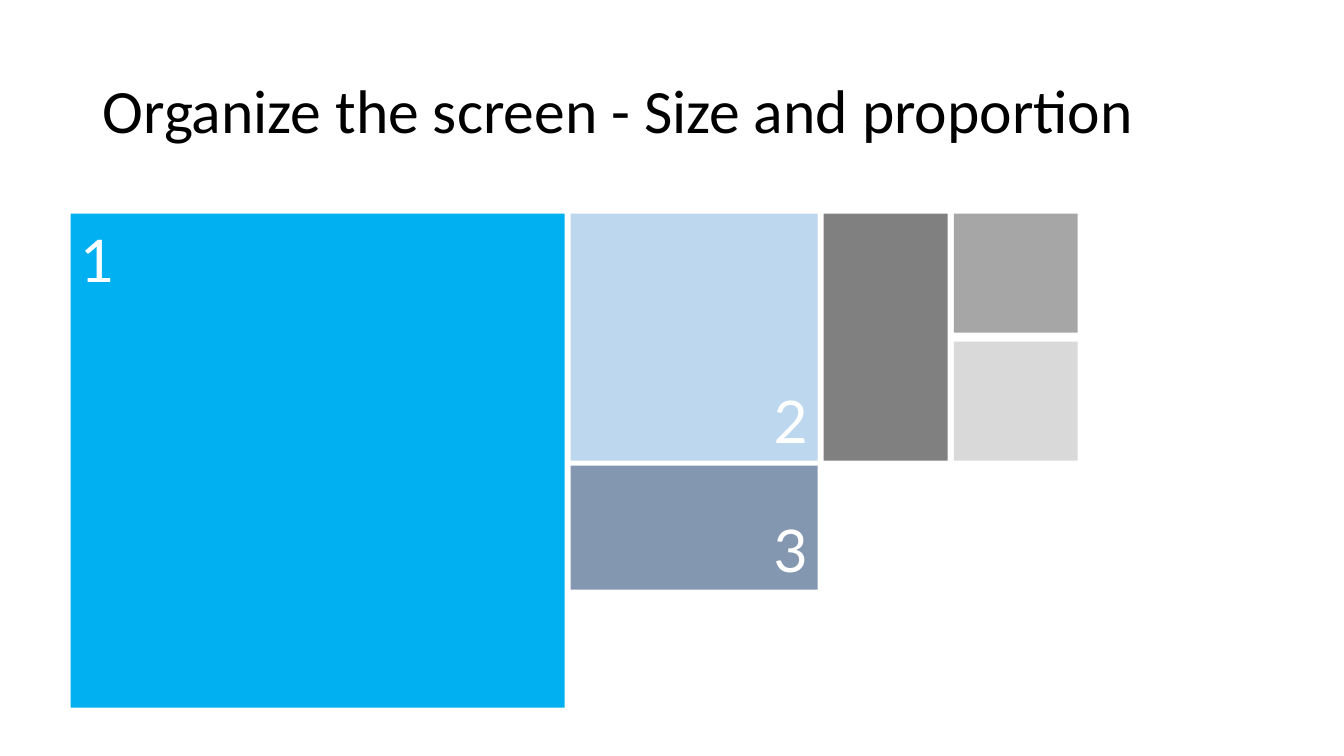
from pptx import Presentation
from pptx.dml.color import RGBColor
from pptx.enum.shapes import MSO_SHAPE
from pptx.enum.text import MSO_ANCHOR, PP_ALIGN
from pptx.util import Pt

PX = 9144  # 100 px to the inch

RECT = MSO_SHAPE.RECTANGLE
TOP, MIDDLE, BOTTOM = MSO_ANCHOR.TOP, MSO_ANCHOR.MIDDLE, MSO_ANCHOR.BOTTOM
LEFT, RIGHT = PP_ALIGN.LEFT, PP_ALIGN.RIGHT

BLACK = RGBColor(0x00, 0x00, 0x00)
WHITE = RGBColor(0xFF, 0xFF, 0xFF)
CYAN = RGBColor(0x00, 0xB0, 0xF0)
PALE = RGBColor(0xBD, 0xD7, 0xEE)
SLATE = RGBColor(0x84, 0x97, 0xB0)
DARK = RGBColor(0x80, 0x80, 0x80)
GRAY = RGBColor(0xA6, 0xA6, 0xA6)
LIGHT = RGBColor(0xD9, 0xD9, 0xD9)

# Each tile side is half of the one before it.
BIG, MID, SMALL = 490, 245, 123
GAP = 6
ROW = 212
COLS = [70]
for side in (BIG, MID, SMALL):
    COLS.append(COLS[-1] + side + GAP)


def px(*sizes):
    return [size * PX for size in sizes]


def write(frame, text, font, size, color, align=LEFT):
    para = frame.paragraphs[0]
    para.text = text
    para.alignment = align
    para.font.name = font
    para.font.size = Pt(size)
    para.font.color.rgb = color
    return para


def add_title(slide, text):
    frame = slide.shapes.add_textbox(*px(92, 40, 1150, 145)).text_frame
    frame.word_wrap = True
    frame.vertical_anchor = MIDDLE
    write(frame, text, "Calibri", 44, BLACK).line_spacing = 0.9


def add_tile(slide, box, color):
    tile = slide.shapes.add_shape(RECT, *px(*box))
    tile.shadow.inherit = False
    tile.fill.solid()
    tile.fill.fore_color.rgb = color
    tile.line.fill.background()
    return tile


def add_rank(tile, text, anchor, align, top, bottom):
    """Number a tile, with its top and bottom insets in px."""
    frame = tile.text_frame
    frame.vertical_anchor = anchor
    frame.margin_top, frame.margin_bottom = px(top, bottom)
    write(frame, text, "Lato", 42, WHITE, align)


def main():
    deck = Presentation()
    deck.slide_width, deck.slide_height = px(1333, 750)
    slide = deck.slides.add_slide(deck.slide_layouts[6])
    add_title(slide, "Organize the screen - Size and proportion")

    one, two, three, four = COLS
    first = add_tile(slide, (one, ROW, BIG, BIG), CYAN)
    add_rank(first, "1", TOP, LEFT, 10, 0)

    second = add_tile(slide, (two, ROW, MID, MID), PALE)
    third = add_tile(slide, (two, ROW + 250, MID, SMALL), SLATE)
    for tile, text in ((second, "2"), (third, "3")):
        add_rank(tile, text, BOTTOM, RIGHT, 5, 5)

    add_tile(slide, (three, ROW, SMALL, MID), DARK)
    for i, color in enumerate((GRAY, LIGHT)):
        add_tile(slide, (four, ROW + i * 127, SMALL, 118), color)

    deck.save("out.pptx")


if __name__ == "__main__":
    main()
